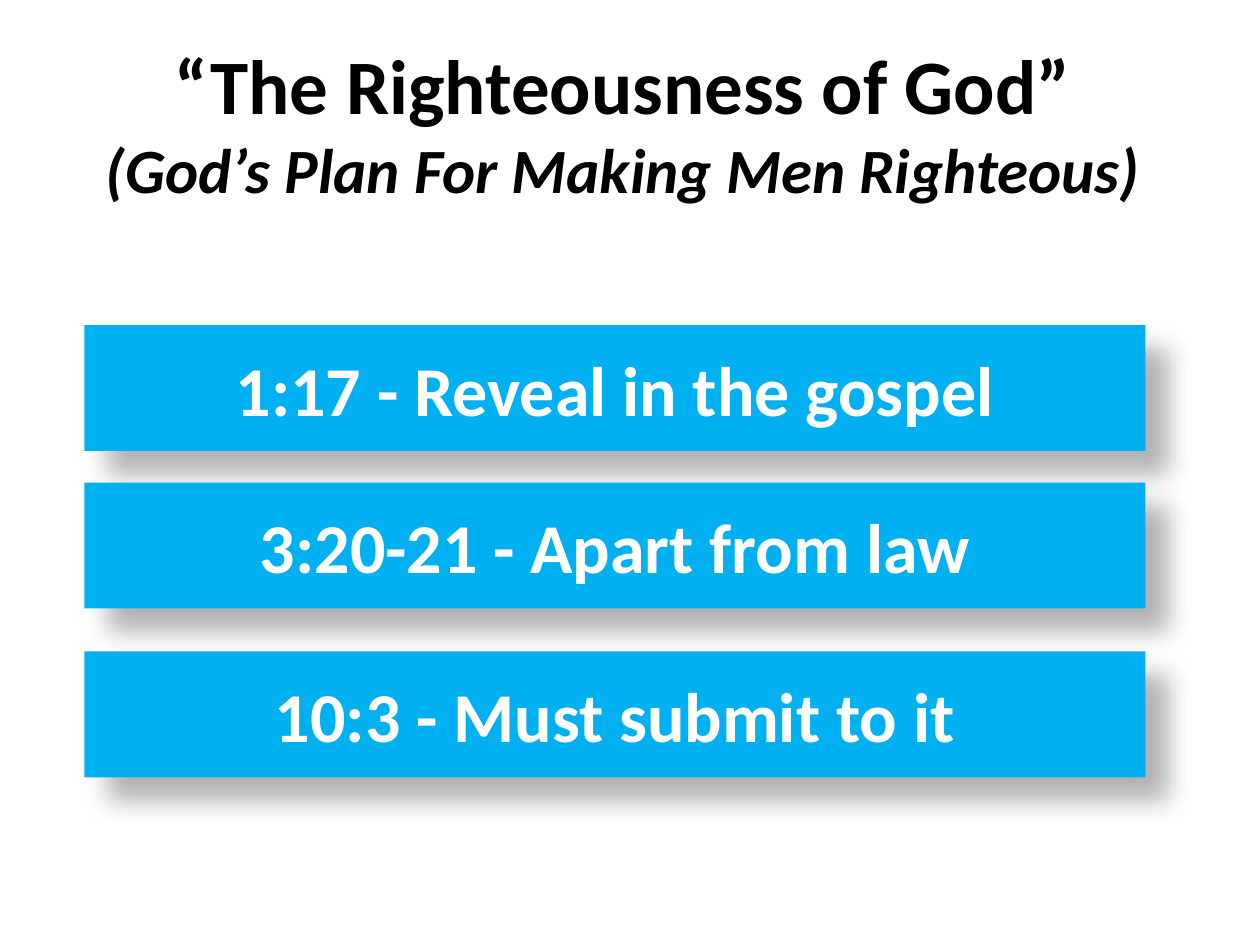
"""Build the slide on the righteousness of God."""
from lxml.etree import SubElement
from pptx import Presentation
from pptx.dml.color import RGBColor
from pptx.enum.shapes import MSO_SHAPE
from pptx.enum.text import MSO_ANCHOR, MSO_AUTO_SIZE, PP_ALIGN
from pptx.oxml.ns import qn
from pptx.util import Inches, Pt


def color(code):
    return RGBColor.from_string(code)


def write(para, text, code, style):
    para.alignment = PP_ALIGN.CENTER
    run = para.add_run()
    run.text = text
    run.font.color.rgb = color(code)
    for key, value in style.items():
        setattr(run.font, key, value)


base = {"name": "Calibri", "bold": True}
deck = Presentation()
deck.slide_width = Inches(10)
deck.slide_height = Inches(7.5)
slide = deck.slides.add_slide(deck.slide_layouts[6])

title = slide.shapes.add_textbox(Inches(0.56), Inches(0.25), Inches(8.77), Inches(1.43))
frame = title.text_frame
frame.word_wrap = False
frame.auto_size = MSO_AUTO_SIZE.SHAPE_TO_FIT_TEXT
write(frame.paragraphs[0], "“The Righteousness of God”", "000000", {**base, "size": Pt(44)})
write(frame.add_paragraph(), "(God’s Plan For Making Men Righteous)", "000000",
      {**base, "size": Pt(36), "italic": True})

points = [
    (2.58, "1:17 - Reveal in the gospel"),
    (3.83, "3:20-21 - Apart from law"),
    (5.17, "10:3 - Must submit to it"),
]
shade = {"blurRad": Pt(15), "dist": Pt(18), "dir": 45 * 60000, "algn": "tl", "rotWithShape": 0}
for top, text in points:
    bar = slide.shapes.add_shape(
        MSO_SHAPE.RECTANGLE, Inches(0.67), Inches(top), Inches(8.42), Inches(1))
    bar.fill.solid()
    bar.fill.fore_color.rgb = color("00B0F0")
    bar.line.fill.background()
    bar.shadow.inherit = False
    effect = bar.element.spPr.find(qn("a:effectLst"))
    outer = SubElement(effect, qn("a:outerShdw"),
                       {key: str(int(value)) if key != "algn" else value
                        for key, value in shade.items()})
    black = SubElement(outer, qn("a:srgbClr"), val="000000")
    SubElement(black, qn("a:alpha"), val="30000")
    frame = bar.text_frame
    frame.word_wrap = False
    frame.vertical_anchor = MSO_ANCHOR.MIDDLE
    write(frame.paragraphs[0], text, "FFFFFF", {**base, "size": Pt(40)})

deck.save("out.pptx")
